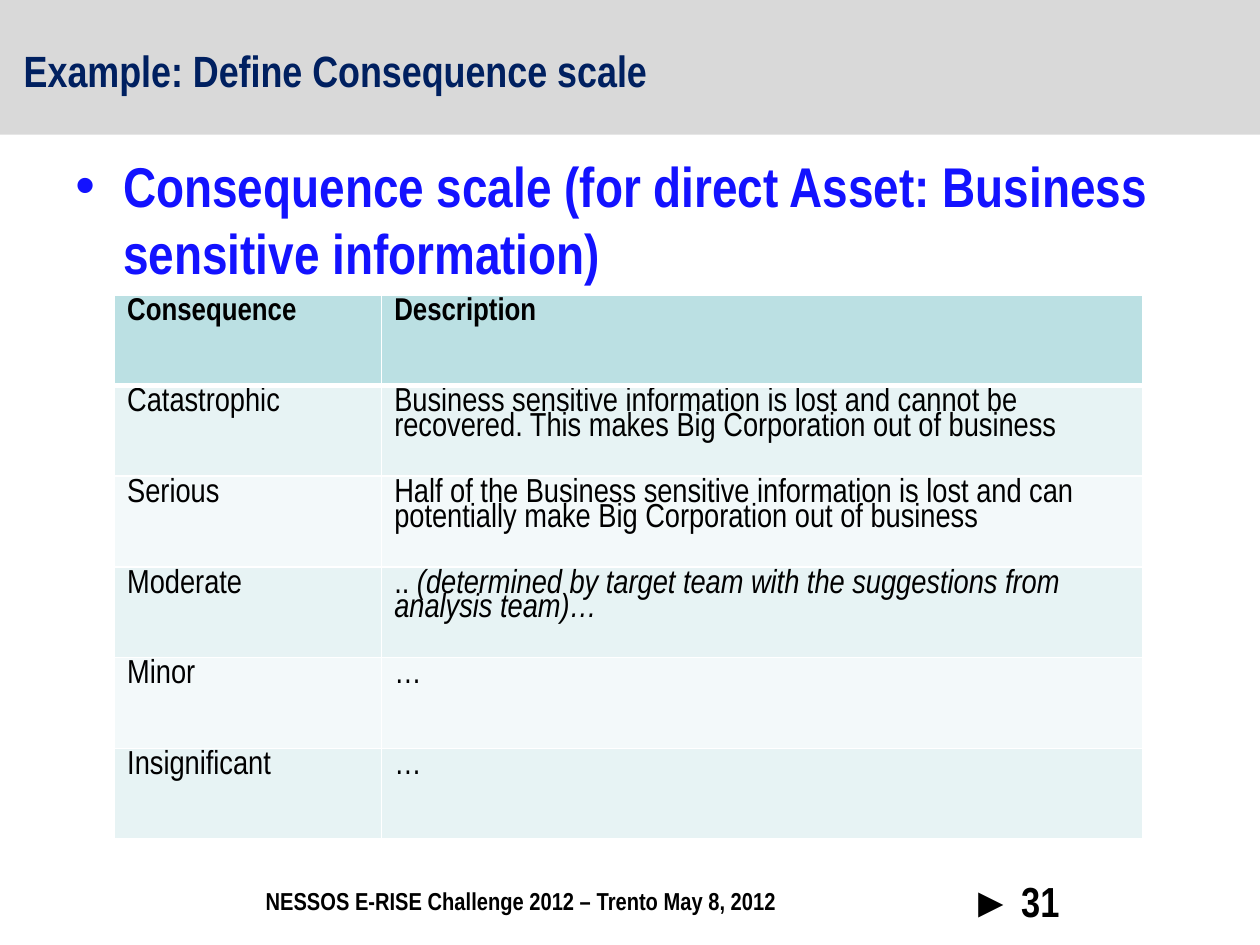
from lxml import etree
from pptx import Presentation
from pptx import util as u
from pptx.dml.color import RGBColor
from pptx.enum import shapes, text
from pptx.oxml.ns import qn

FONT = "Arial Narrow"
GREY = RGBColor(0xD9, 0xD9, 0xD9)
NAVY = RGBColor(0x00, 0x20, 0x60)
BLUE = RGBColor(0x13, 0x12, 0xFF)
BLACK = RGBColor(0, 0, 0)
HEADER_FILL = RGBColor(0xBB, 0xE0, 0xE3)
BAND_FILLS = (RGBColor(0xF3, 0xF9, 0xFA), RGBColor(0xE7, 0xF3, 0xF4))

ROWS = [
    ("Consequence", ["Description"]),
    ("Catastrophic", ["Business sensitive information is lost and cannot be recovered. "
                      "This makes Big Corporation out of business"]),
    ("Serious", ["Half of the Business sensitive information is lost and can "
                 "potentially make Big Corporation out of business"]),
    ("Moderate", ["..", " (determined by target team with the suggestions from analysis team)…"]),
    ("Minor", ["…"]),
    ("Insignificant", ["…"]),
]


def style_font(font, size, color, bold=True):
    """Apply the slide's typeface with a size, colour and weight."""
    font.name, font.size, font.bold = FONT, u.Pt(size), bold
    font.color.rgb = color


def add_text(slide, box, content, size, color, anchor=text.MSO_ANCHOR.TOP):
    """Add a one-paragraph text box and return its paragraph."""
    frame = slide.shapes.add_textbox(*map(u.Inches, box)).text_frame
    frame.word_wrap = True
    frame.vertical_anchor = anchor
    frame.text = content
    paragraph = frame.paragraphs[0]
    style_font(paragraph.runs[0].font, size, color)
    return paragraph


def add_header(slide, box):
    """Draw the grey band and the slide title on it."""
    left, top, width, height = box
    band = slide.shapes.add_shape(shapes.MSO_SHAPE.RECTANGLE, *map(u.Inches, box))
    band.shadow.inherit = False
    band.fill.solid()
    band.fill.fore_color.rgb = GREY
    band.line.fill.background()
    add_text(slide, (left + 0.09, top + 0.24, width - 1, 0.69),
             "Example: Define Consequence scale", 25, NAVY, text.MSO_ANCHOR.MIDDLE)


def add_bullet(slide, box):
    """Place the bulleted statement above the table."""
    paragraph = add_text(
        slide, box, "Consequence scale (for direct Asset: Business sensitive information)", 32, BLUE)
    properties = paragraph._p.get_or_add_pPr()
    properties.set("marL", str(u.Inches(0.38)))
    properties.set("indent", str(u.Inches(-0.38)))
    etree.SubElement(properties, qn("a:buFont"), typeface="Arial")
    etree.SubElement(properties, qn("a:buChar"), char="•")


def set_borders(cell, bottom_width):
    """Give a cell white borders, with its own bottom width."""
    properties = cell._tc.get_or_add_tcPr()
    widths = {"lnL": 1, "lnR": 1, "lnT": 1, "lnB": bottom_width}
    for index, (tag, width) in enumerate(widths.items()):
        line = etree.Element(qn(f"a:{tag}"), w=str(u.Pt(width)))
        fill = etree.SubElement(line, qn("a:solidFill"))
        etree.SubElement(fill, qn("a:srgbClr"), val="FFFFFF")
        properties.insert(index, line)


def fill_cell(cell, parts, row_index):
    """Write the text parts into a cell, the later ones in italics."""
    is_header = row_index == 0
    paragraph = cell.text_frame.paragraphs[0]
    paragraph.line_spacing = 0.8
    for index, part in enumerate(parts):
        run = paragraph.add_run()
        run.text = part
        style_font(run.font, 18 if is_header else 19, BLACK, is_header)
        run.font.italic = index > 0
    cell.fill.solid()
    cell.fill.fore_color.rgb = HEADER_FILL if is_header else BAND_FILLS[row_index % 2]
    set_borders(cell, 3 if is_header else 1)


def add_scale_table(slide, box):
    """Build the table of consequence levels."""
    table = slide.shapes.add_table(len(ROWS), 2, *map(u.Inches, box)).table
    first_width = 2.12
    table.columns[0].width = u.Inches(first_width)
    table.columns[1].width = u.Inches(box[2] - first_width)
    for row_index, (level, description) in enumerate(ROWS):
        table.rows[row_index].height = u.Inches(box[3] / len(ROWS))
        fill_cell(table.cell(row_index, 0), [level], row_index)
        fill_cell(table.cell(row_index, 1), description, row_index)


def add_footer(slide, box):
    """Place the event line and the slide number."""
    left, top, width, height = box
    add_text(slide, (left, top + 0.08, 4.88, 0.34),
             "NESSOS E-RISE Challenge 2012 – Trento May 8, 2012", 14, BLACK)
    add_text(slide, (left + width - 2.08, top, 2.08, height), "► 31", 24, BLACK)


def main():
    """Build and save the slide."""
    presentation = Presentation()
    presentation.slide_width, presentation.slide_height = u.Inches(10), u.Inches(7.5)
    slide = presentation.slides.add_slide(presentation.slide_layouts[6])
    add_header(slide, (0, -0.03, 10, 1.1))
    add_bullet(slide, (0.5, 1.15, 9, 1.19))
    add_scale_table(slide, (0.91, 2.34, 8.16, 4.32))
    add_footer(slide, (2.01, 6.9, 7.67, 0.6))
    presentation.save("out.pptx")


if __name__ == "__main__":
    main()
